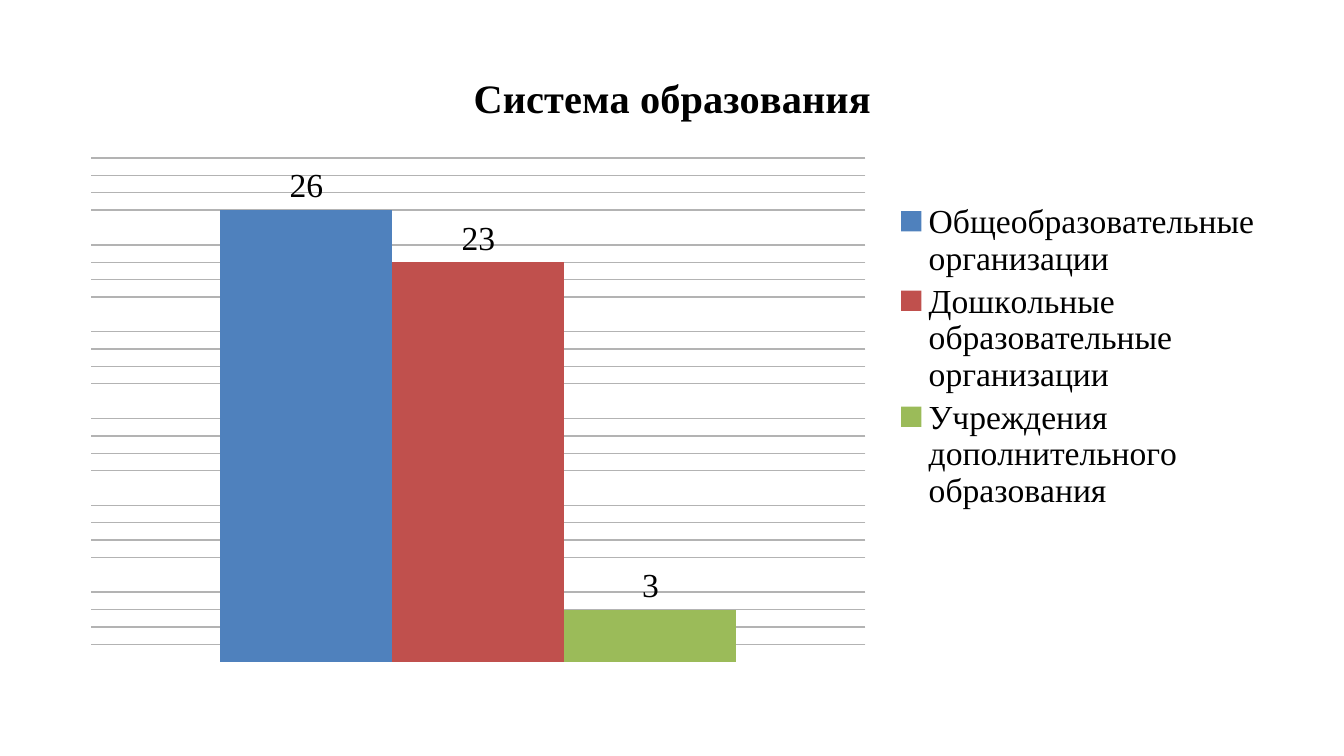
from dataclasses import dataclass

from pptx import Presentation
from pptx.chart.data import CategoryChartData
from pptx.dml.color import RGBColor
from pptx.enum.chart import XL_CHART_TYPE as ChartType
from pptx.enum.chart import XL_LABEL_POSITION as LabelPosition
from pptx.enum.chart import XL_LEGEND_POSITION as LegendPosition
from pptx.oxml import parse_xml
from pptx.oxml.ns import nsdecls, qn
from pptx.util import Cm, Pt

BLACK = RGBColor(0x00, 0x00, 0x00)
GRID_GREY = RGBColor(0xB3, 0xB3, 0xB3)
BLUE = RGBColor(0x4F, 0x81, 0xBD)
RED = RGBColor(0xC0, 0x50, 0x4D)
GREEN = RGBColor(0x9B, 0xBB, 0x59)
SERIF = "Times New Roman"


@dataclass
class Institution:
    name: str
    count: int
    color: RGBColor


INSTITUTIONS = [
    Institution("Общеобразовательные организации", 26, BLUE),
    Institution("Дошкольные образовательные организации", 23, RED),
    Institution("Учреждения дополнительного образования", 3, GREEN),
]


def format_font(font, name: str = SERIF, size: float = 18, bold: bool = False) -> None:
    font.name = name
    font.size = Pt(size)
    font.bold = bold
    font.color.rgb = BLACK


def write_text(text_frame, text: str, **font_format) -> None:
    text_frame.text = text
    format_font(text_frame.paragraphs[0].runs[0].font, **font_format)


def make_layout(inner: bool = False, **fractions: float):
    """Manual chart layout; fractions are x, y and optionally w, h of the chart."""
    target = '<c:layoutTarget val="inner"/>' if inner else ""
    modes = '<c:xMode val="edge"/><c:yMode val="edge"/>'
    values = "".join(f'<c:{key} val="{value}"/>' for key, value in fractions.items())
    return parse_xml(
        f"<c:layout {nsdecls('c')}><c:manualLayout>{target}{modes}{values}"
        "</c:manualLayout></c:layout>"
    )


def remove_layout(element) -> None:
    for layout in element.findall(qn("c:layout")):
        element.remove(layout)


def color_minor_gridlines(axis, color: RGBColor) -> None:
    gridlines = axis._element.find(qn("c:minorGridlines"))
    gridlines.append(parse_xml(
        f"<c:spPr {nsdecls('c', 'a')}><a:ln><a:solidFill>"
        f'<a:srgbClr val="{color}"/></a:solidFill></a:ln></c:spPr>'
    ))


def add_institution_chart(slide, institutions: list[Institution]):
    data = CategoryChartData()
    data.categories = ["1"]
    for institution in institutions:
        data.add_series(institution.name, [institution.count])
    frame = slide.shapes.add_chart(
        ChartType.COLUMN_CLUSTERED, Cm(1.27), Cm(0.74), Cm(22.86), Cm(12.01), data
    )
    chart = frame.chart
    format_font(chart.font, name="Calibri")

    # Columns and value labels
    plot = chart.plots[0]
    plot.gap_width = 150
    plot.overlap = 0
    plot.vary_by_categories = False
    for series, institution in zip(plot.series, institutions):
        series.format.fill.solid()
        series.format.fill.fore_color.rgb = institution.color
        labels = series.data_labels
        labels.show_value = True
        labels.position = LabelPosition.OUTSIDE_END
        format_font(labels.font)

    # Hidden axes with minor gridlines only
    chart.category_axis.visible = False
    axis = chart.value_axis
    axis.visible = False
    axis.minimum_scale, axis.maximum_scale = 0, 30
    axis.major_unit, axis.minor_unit = 5, 1
    axis.has_major_gridlines = False
    axis.has_minor_gridlines = True
    color_minor_gridlines(axis, GRID_GREY)

    # Legend
    chart.has_legend = True
    chart.legend.position = LegendPosition.RIGHT
    chart.legend.include_in_layout = False
    format_font(chart.legend.font)

    # Title
    chart.has_title = True
    write_text(chart.chart_title.text_frame, "Система образования", size=21.6, bold=True)
    title = chart.chart_title._element
    remove_layout(title)
    title.find(qn("c:tx")).addnext(make_layout(x=0.33, y=0.04))

    # Plot area
    plot_area = chart._chartSpace.chart.plotArea
    remove_layout(plot_area)
    plot_area.insert(0, make_layout(inner=True, x=0.02, y=0.16, w=0.64, h=0.82))
    return chart


def main() -> None:
    presentation = Presentation()
    presentation.slide_width = Cm(25.4)
    presentation.slide_height = Cm(14.29)
    slide = presentation.slides.add_slide(presentation.slide_layouts[6])
    add_institution_chart(slide, INSTITUTIONS)
    presentation.save("out.pptx")


if __name__ == "__main__":
    main()
